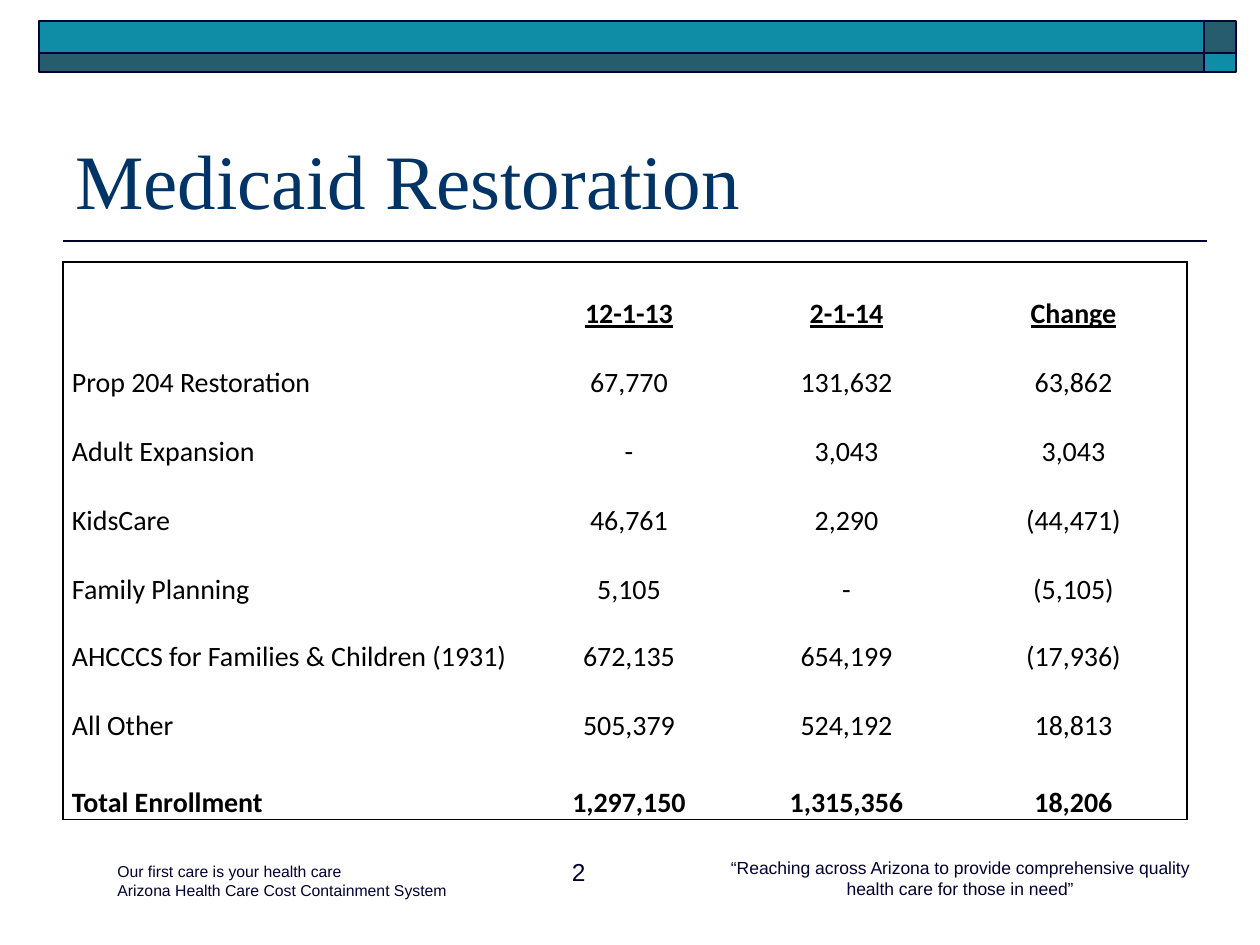
from lxml import etree
from pptx import Presentation
from pptx import util as u
from pptx.dml.color import RGBColor
from pptx.enum import shapes, text
from pptx.oxml.ns import qn

SCALE = 914400 / 126  # EMU per px
NAVY, TITLE, TEAL, SLATE, BLACK = "000033", "003366", "108DA6", "275C6D", "000000"
LEFT, CENTER, RIGHT = text.PP_ALIGN.LEFT, text.PP_ALIGN.CENTER, text.PP_ALIGN.RIGHT
TOP, BOTTOM = text.MSO_ANCHOR.TOP, text.MSO_ANCHOR.BOTTOM


def px(*lengths):
    return [u.Emu(round(length * SCALE)) for length in lengths]


def color(value):
    return RGBColor.from_string(value)


def write(frame, content, font="Arial", size=10, fill=NAVY, align=LEFT,
          bold=False, underline=False, line_spacing=None, after=None):
    frame.word_wrap = True
    for index, line in enumerate(content.split("\n")):
        paragraph = frame.add_paragraph() if index else frame.paragraphs[0]
        paragraph.alignment = align
        paragraph.line_spacing = line_spacing
        paragraph.space_after = after
        run = paragraph.add_run()
        run.text = line
        run.font.name, run.font.size = font, u.Pt(size)
        run.font.bold, run.font.underline = bold, underline
        run.font.color.rgb = color(fill)


class SlideBuilder:
    def __init__(self, slide, line_color=NAVY, line_width=1):
        self.slide = slide
        self.line_color = line_color
        self.line_width = u.Pt(line_width)

    def rectangle(self, left, top, width, height, fill):
        shape = self.slide.shapes.add_shape(
            shapes.MSO_SHAPE.RECTANGLE, *px(left, top, width, height))
        shape.shadow.inherit = False
        shape.fill.solid()
        shape.fill.fore_color.rgb = color(fill)
        shape.line.color.rgb = color(self.line_color)
        shape.line.width = self.line_width

    def line(self, x1, y1, x2, y2):
        connector = self.slide.shapes.add_connector(
            shapes.MSO_CONNECTOR.STRAIGHT, *px(x1, y1, x2, y2))
        connector.line.color.rgb = color(self.line_color)
        connector.line.width = self.line_width
        etree.SubElement(connector._element.spPr, qn("a:effectLst"))

    def text(self, left, top, width, height, content, anchor=TOP, **style):
        box = self.slide.shapes.add_textbox(*px(left, top, width, height))
        box.text_frame.vertical_anchor = anchor
        write(box.text_frame, content, **style)

    def border(self, cell, side, visible):
        line = etree.SubElement(cell._tc.get_or_add_tcPr(), qn(f"a:ln{side}"),
                                w=str(self.line_width))
        if visible:
            fill = etree.SubElement(line, qn("a:solidFill"))
            etree.SubElement(fill, qn("a:srgbClr"), val=BLACK)
        else:
            etree.SubElement(line, qn("a:noFill"))

    def table(self, left, top, widths, heights, rows):
        last_row, last_column = len(rows) - 1, len(widths) - 1
        table = self.slide.shapes.add_table(
            len(rows), len(widths),
            *px(left, top, sum(widths), sum(heights))).table
        table.first_row = table.horz_banding = False
        for column, width in zip(table.columns, px(*widths)):
            column.width = width
        for row, height in zip(table.rows, px(*heights)):
            row.height = height
        for r, values in enumerate(rows):
            for c, value in enumerate(values):
                cell = table.cell(r, c)
                # Only the outer frame is drawn
                for side, visible in (("L", c == 0), ("R", c == last_column),
                                      ("T", r == 0), ("B", r == last_row)):
                    self.border(cell, side, visible)
                cell.fill.background()
                cell.vertical_anchor = BOTTOM
                cell.margin_left, cell.margin_right = px(9, 9)
                cell.margin_top = cell.margin_bottom = 0
                if value:
                    write(cell.text_frame, value, font="Calibri", size=16,
                          fill=BLACK, align=CENTER if c else LEFT,
                          bold=r in (0, last_row), underline=r == 0,
                          line_spacing=1.15, after=u.Pt(6))


def main():
    presentation = Presentation()
    presentation.slide_width, presentation.slide_height = px(1260, 945)
    slide = SlideBuilder(presentation.slides.add_slide(presentation.slide_layouts[6]))

    # Header band: two bars, each with a square of the other colour
    for top, height, bar, square in ((21, 32, TEAL, SLATE), (53, 19, SLATE, TEAL)):
        slide.rectangle(39, top, 1165, height, bar)
        slide.rectangle(1204, top, 32, height, square)

    # Title and rule
    slide.line(63, 241, 1207, 241)
    slide.text(63, 73, 1134, 158, "Medicaid Restoration", anchor=BOTTOM,
               font="Times New Roman", size=44, fill=TITLE)

    # Enrollment table
    slide.table(63, 262, [462, 208, 227, 227], [69] * 5 + [67, 69, 77], [
        ["", "12-1-13", "2-1-14", "Change"],
        ["Prop 204 Restoration", "67,770", "131,632", "63,862"],
        ["Adult Expansion", "-", "3,043", "3,043"],
        ["KidsCare", "46,761", "2,290", "(44,471)"],
        ["Family Planning", "5,105", "-", "(5,105)"],
        ["AHCCCS for Families & Children (1931)", "672,135", "654,199", "(17,936)"],
        ["All Other", "505,379", "524,192", "18,813"],
        ["Total Enrollment", "1,297,150", "1,315,356", "18,206"],
    ])

    # Footer
    slide.text(105, 856, 355, 50, "Our first care is your health care\n"
               "Arizona Health Care Cost Containment System", size=9)
    slide.text(462, 851, 136, 66, "2", size=14, align=RIGHT)
    slide.text(703, 851, 514, 54, "“Reaching across Arizona to provide "
               "comprehensive quality health care for those in need”", align=CENTER)

    presentation.save("out.pptx")


if __name__ == "__main__":
    main()
